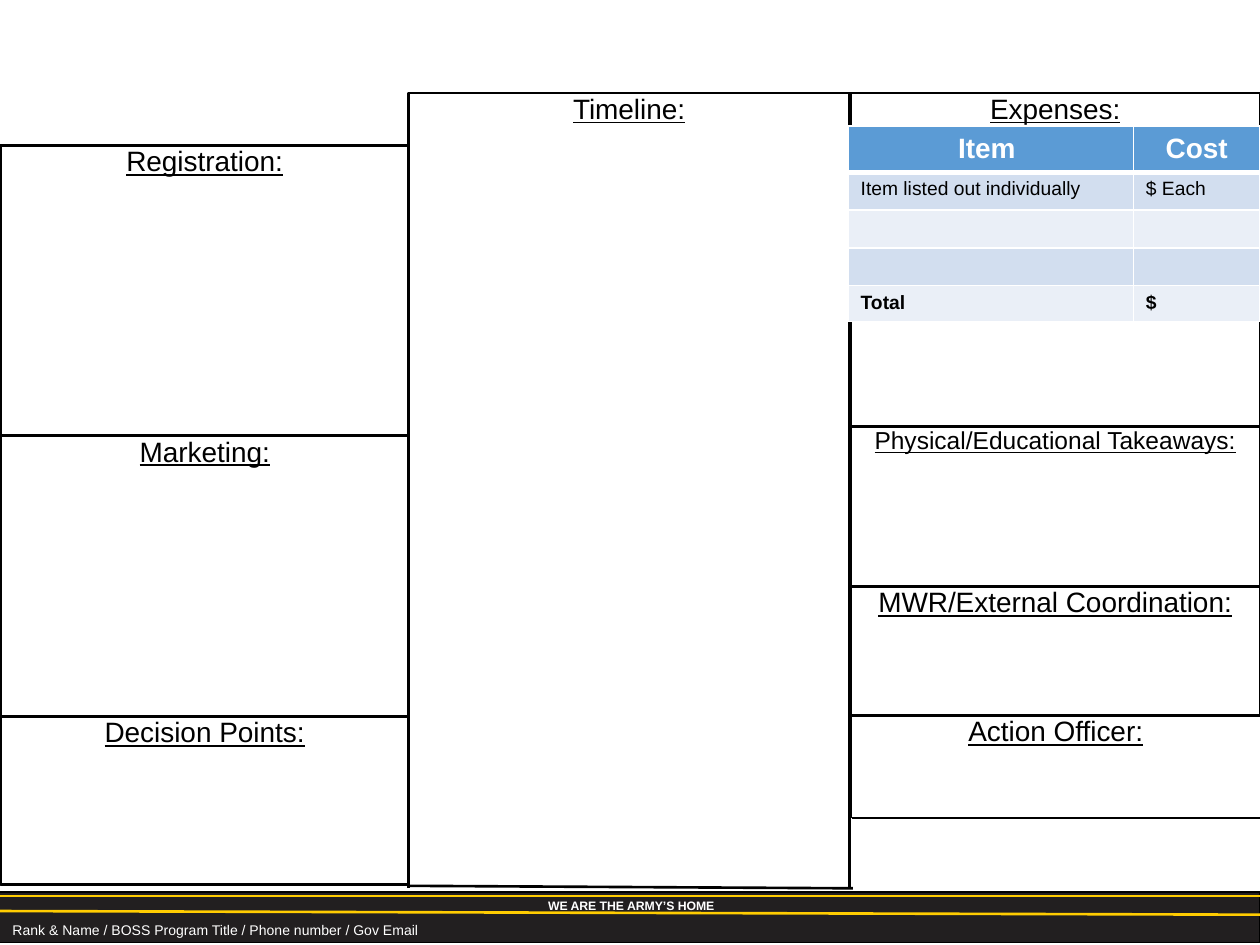
"""Build an event planning one-pager with labelled panels, an expense table and a footer."""
from dataclasses import dataclass

from lxml import etree
from pptx import Presentation
from pptx import util as u
from pptx.dml.color import RGBColor
from pptx.enum import shapes, text
from pptx.oxml.ns import qn

Pt = u.Pt
COLORS = {
    "ink": "000000",
    "paper": "FFFFFF",
    "bar": "221F20",
    "gold": "FFCC01",
    "header": "5B9BD5",
    "band_dark": "D2DEEF",
    "band_light": "EAEFF7",
}
FONT = "Arial"
LEFT, MIDDLE, MIDDLE_END, RIGHT, EDGE = 0.5, 233.5, 485.5, 486, 720
TOP, REGISTRATION, MARKETING, DECISIONS, LEFT_END = 53.2, 83, 249, 409.5, 505.5
TAKEAWAYS, COORDINATION, OFFICER, OFFICER_END, TIMELINE_END = 243.8, 335, 408.8, 467.5, 507.6
LABEL_RISE = 4.5


@dataclass
class Panel:
    label: str
    left: float
    top: float
    right: float
    bottom: float
    label_width: float
    size: float = 16
    is_open: bool = False


@dataclass
class Rule:
    start: tuple[float, float]
    end: tuple[float, float]
    color: str
    weight: float = 1.5


@dataclass
class Style:
    size: float
    color: str = "ink"
    bold: bool = False
    underline: bool = False
    align: text.PP_ALIGN = text.PP_ALIGN.LEFT


PANELS = [
    Panel("Registration:", LEFT, REGISTRATION, MIDDLE, MARKETING, 105),
    Panel("Marketing:", LEFT, MARKETING, MIDDLE, DECISIONS, 90),
    Panel("Decision Points:", LEFT, DECISIONS, MIDDLE, LEFT_END, 130),
    Panel("Timeline:", MIDDLE, TOP, MIDDLE_END, TIMELINE_END, 79, is_open=True),
    Panel("Expenses:", RIGHT, TOP, EDGE, TAKEAWAYS, 90),
    Panel("Physical/Educational Takeaways:", RIGHT, TAKEAWAYS, EDGE, COORDINATION, 222, 14),
    Panel("MWR/External Coordination:", RIGHT, COORDINATION, EDGE, OFFICER, 219),
    Panel("Action Officer:", RIGHT, OFFICER, EDGE + 0.7, OFFICER_END, 116, is_open=True),
]
BAR_RULES = [
    Rule((-0.7, 512), (721.4, 512), "gold"),
    Rule((-2.2, 520.6), (720.7, 522.7), "gold"),
]
PANEL_RULES = [
    Rule((EDGE + 0.7, OFFICER_END), (486.7, OFFICER_END), "ink"),
    Rule((487.4, TIMELINE_END), (234, 506.2), "ink"),
]
COLUMN_WIDTHS = [163, 72.5]
ROW_HEIGHTS = [16, 21.6, 21.6, 21.6, 14.4]
EXPENSES = [
    ["Item\u00a0".replace("\u00a0", " "), "Cost"],
    ["Item listed out individually", "$ Each"],
    ["", ""],
    ["", ""],
    ["Total", "$"],
]


def rgb(name: str) -> RGBColor:
    return RGBColor.from_string(COLORS[name])


def add_run(paragraph, words: str, style: Style) -> None:
    paragraph.alignment = style.align
    run = paragraph.add_run()
    run.text = words
    run.font.name = FONT
    run.font.size = Pt(style.size)
    run.font.bold = style.bold
    run.font.underline = style.underline
    run.font.color.rgb = rgb(style.color)


def add_text(slide, words: str, box: tuple[float, ...], style: Style,
             wrap: bool = True, anchor=text.MSO_ANCHOR.TOP, grow: bool = True) -> None:
    frame = slide.shapes.add_textbox(*map(Pt, box)).text_frame
    frame.word_wrap = wrap
    frame.vertical_anchor = anchor
    frame.auto_size = text.MSO_AUTO_SIZE.SHAPE_TO_FIT_TEXT if grow else text.MSO_AUTO_SIZE.NONE
    add_run(frame.paragraphs[0], words, style)


def add_rule(slide, rule: Rule) -> None:
    points = map(Pt, (*rule.start, *rule.end))
    connector = slide.shapes.add_connector(shapes.MSO_CONNECTOR.STRAIGHT, *points)
    connector.line.color.rgb = rgb(rule.color)
    connector.line.width = Pt(rule.weight)
    etree.SubElement(connector._element.spPr, qn("a:effectLst"))


def add_panel(slide, panel: Panel) -> None:
    width = panel.right - panel.left
    if panel.is_open:
        builder = slide.shapes.build_freeform(Pt(panel.right), Pt(panel.bottom))
        corners = [(panel.right, panel.top), (panel.left, panel.top), (panel.left, panel.bottom)]
        builder.add_line_segments([(Pt(x), Pt(y)) for x, y in corners], close=False)
        shape = builder.convert_to_shape()
    else:
        box = (panel.left, panel.top, width, panel.bottom - panel.top)
        shape = slide.shapes.add_shape(shapes.MSO_SHAPE.RECTANGLE, *map(Pt, box))
    shape.shadow.inherit = False
    shape.fill.background()
    shape.line.color.rgb = rgb("ink")
    shape.line.width = Pt(1.56)
    label_left = panel.left + (width - panel.label_width) / 2
    label_height = panel.size * 1.15 + 7.2
    add_text(slide, panel.label,
             (label_left, panel.top - LABEL_RISE, panel.label_width, label_height),
             Style(panel.size, underline=True, align=text.PP_ALIGN.CENTER), wrap=False)


def add_bar(slide) -> None:
    bar = slide.shapes.add_shape(shapes.MSO_SHAPE.RECTANGLE, *map(Pt, (-0.7, 509.8, 720.7, 28.8)))
    bar.shadow.inherit = False
    bar.fill.solid()
    bar.fill.fore_color.rgb = rgb("bar")
    bar.line.color.rgb = rgb("ink")
    bar.line.width = Pt(1)
    for rule in BAR_RULES:
        add_rule(slide, rule)
    add_text(slide, "WE ARE THE ARMY’S HOME", (266.4, 509.8, 188.6, 15.8),
             Style(7, "paper", bold=True, align=text.PP_ALIGN.CENTER))


def set_borders(cell, is_header: bool) -> None:
    properties = cell._tc.get_or_add_tcPr()
    for index, side in enumerate(("lnL", "lnR", "lnT", "lnB")):
        weight = 3 if is_header and side == "lnB" else 1
        line = etree.Element(qn(f"a:{side}"), w=str(Pt(weight)))
        fill = etree.SubElement(line, qn("a:solidFill"))
        etree.SubElement(fill, qn("a:srgbClr"), val=COLORS["paper"])
        properties.insert(index, line)


def fill_cell(cell, words: str, row: int) -> None:
    is_header = row == 0
    band = "band_dark" if row % 2 else "band_light"
    cell.fill.solid()
    cell.fill.fore_color.rgb = rgb("header" if is_header else band)
    set_borders(cell, is_header)
    paragraph = cell.text_frame.paragraphs[0]
    if is_header:
        cell.vertical_anchor = text.MSO_ANCHOR.MIDDLE
        add_run(paragraph, words, Style(16, "paper", bold=True, align=text.PP_ALIGN.CENTER))
    elif words:
        add_run(paragraph, words, Style(11, bold=row == len(EXPENSES) - 1))
    else:
        etree.SubElement(paragraph._p, qn("a:endParaRPr"), sz="1100")


def add_expenses(slide) -> None:
    box = (484.6, 72, sum(COLUMN_WIDTHS), sum(ROW_HEIGHTS))
    size = len(ROW_HEIGHTS), len(COLUMN_WIDTHS)
    table = slide.shapes.add_table(*size, *map(Pt, box)).table
    for column, width in zip(table.columns, COLUMN_WIDTHS):
        column.width = Pt(width)
    for index, (row, height) in enumerate(zip(table.rows, ROW_HEIGHTS)):
        row.height = Pt(height)
        for cell, words in zip(row.cells, EXPENSES[index]):
            fill_cell(cell, words, index)


def main() -> None:
    presentation = Presentation()
    presentation.slide_width, presentation.slide_height = Pt(720), Pt(540)
    slide = presentation.slides.add_slide(presentation.slide_layouts[6])
    add_bar(slide)
    for panel in PANELS:
        add_panel(slide, panel)
    for rule in PANEL_RULES:
        add_rule(slide, rule)
    add_text(slide, "Rank & Name / BOSS Program Title / Phone number / Gov Email",
             (0, 522.7, 589.7, 17.3), Style(8, "paper"),
             anchor=text.MSO_ANCHOR.MIDDLE, grow=False)
    add_expenses(slide)
    presentation.save("out.pptx")


if __name__ == "__main__":
    main()
